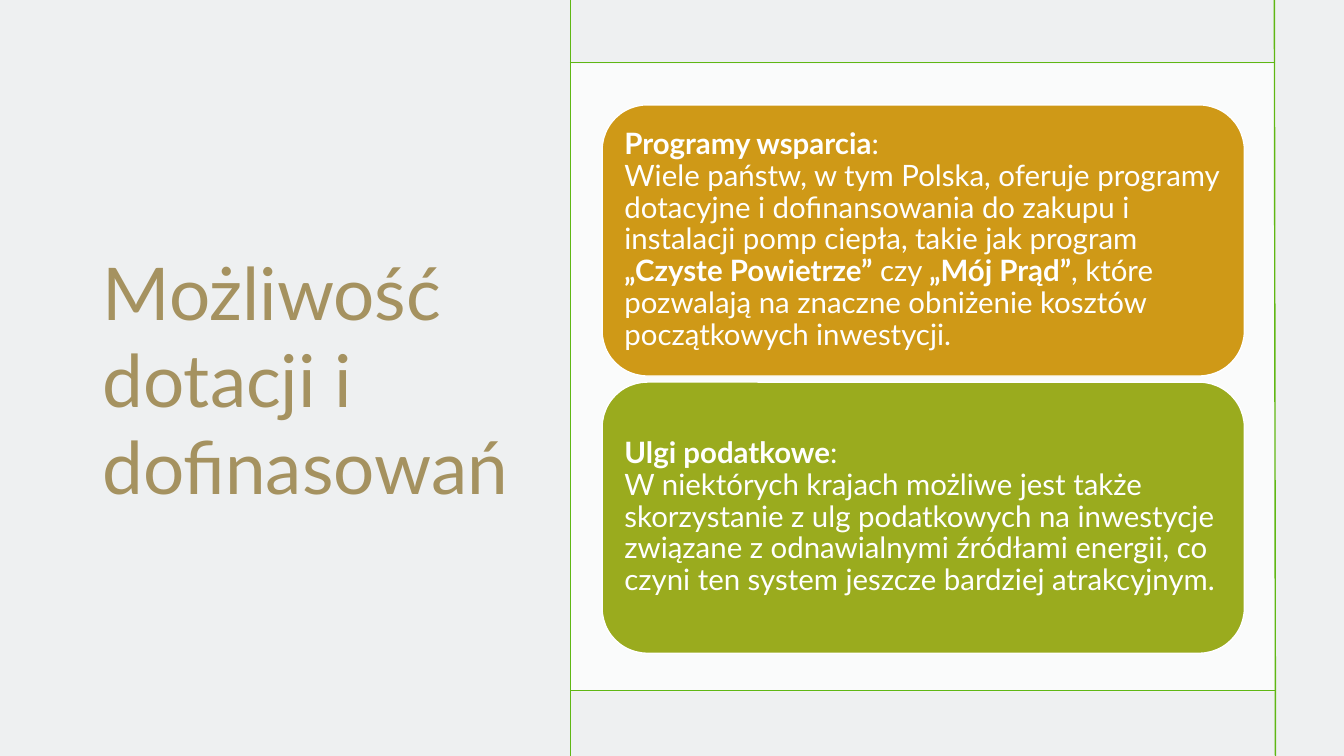
from dataclasses import dataclass

from lxml import etree
from pptx import Presentation
from pptx import util as u
from pptx.dml.color import RGBColor
from pptx.enum import shapes, text
from pptx.oxml import ns


@dataclass(frozen=True)
class Theme:
    font: str = "Lato"
    backdrop: str = "EEF0F1"
    white: str = "FFFFFF"
    rule: str = "5FB714"
    title: str = "A59260"
    amber: str = "CF9917"
    olive: str = "9AAB1E"
    title_size: int = 52
    body_size: int = 21
    line_width: int = 1
    panel_alpha: int = 75


@dataclass(frozen=True)
class Box:
    x: float
    y: float
    w: float
    h: float


@dataclass(frozen=True)
class Rule:
    x1: float
    y1: float
    x2: float
    y2: float


@dataclass(frozen=True)
class Run:
    words: str
    bold: bool = False


@dataclass(frozen=True)
class Card:
    heading: str
    body: tuple[Run, ...]
    fill: str


THEME = Theme()
WIDTH, HEIGHT = u.Inches(13.33), u.Inches(7.5)

FULL = Box(0, 0, 100, 100)
TITLE = Box(6.9, 8.53, 33.75, 83.07)
PANEL = Box(42.46, 8.4, 52.44, 83.07)
FIRST_CARD = Box(44.8, 13.87, 47.79, 35.87)
CARD_PITCH = 36.67

RULES = [
    Rule(42.4, 8.27, 94.9, 8.27),
    Rule(42.46, 91.33, 94.97, 91.33),
    Rule(42.46, 0, 42.46, 100),
    Rule(94.82, 0, 94.9, 100),
]

CARDS = [
    Card(
        "Programy wsparcia",
        (
            Run("Wiele państw, w tym Polska, oferuje programy dotacyjne i dofinansowania "
                "do zakupu i instalacji pomp ciepła, takie jak program "),
            Run("„Czyste Powietrze”", True),
            Run(" czy "),
            Run("„Mój Prąd”", True),
            Run(", które pozwalają na znaczne obniżenie kosztów początkowych inwestycji."),
        ),
        THEME.amber,
    ),
    Card(
        "Ulgi podatkowe",
        (
            Run("W niektórych krajach możliwe jest także skorzystanie z ulg podatkowych "
                "na inwestycje związane z odnawialnymi źródłami energii, co czyni ten "
                "system jeszcze bardziej atrakcyjnym."),
        ),
        THEME.olive,
    ),
]


def across(share: float) -> int:
    return round(WIDTH * share / 100)


def down(share: float) -> int:
    return round(HEIGHT * share / 100)


def place(box: Box) -> tuple[int, int, int, int]:
    return across(box.x), down(box.y), across(box.w), down(box.h)


def apply(target, formats: dict) -> None:
    for name, value in formats.items():
        setattr(target, name, value)


def add_run(p, run: Run, size: int, color: str) -> None:
    r = p.add_run()
    r.text = run.words
    apply(r.font, {"name": THEME.font, "size": u.Pt(size), "bold": run.bold})
    r.font.color.rgb = RGBColor.from_string(color)


def add_block(s, kind, box: Box, fill: str, line: str | None = None, alpha: int = 100):
    sp = s.shapes.add_shape(kind, *place(box))
    sp.shadow.inherit = False
    sp.fill.solid()
    sp.fill.fore_color.rgb = RGBColor.from_string(fill)
    if alpha < 100:
        color = sp.fill._xPr.find(".//" + ns.qn("a:srgbClr"))
        etree.SubElement(color, ns.qn("a:alpha"), val=str(alpha * 1000))
    if line:
        sp.line.color.rgb = RGBColor.from_string(line)
        sp.line.width = u.Pt(THEME.line_width)
    else:
        sp.line.fill.background()
    return sp


def add_title(s, words: str) -> None:
    tf = s.shapes.add_textbox(*place(TITLE)).text_frame
    apply(tf, {"word_wrap": True, "vertical_anchor": text.MSO_ANCHOR.MIDDLE})
    add_run(tf.paragraphs[0], Run(words), THEME.title_size, THEME.title)


def add_rule(s, rule: Rule) -> None:
    line = s.shapes.add_connector(
        shapes.MSO_CONNECTOR.STRAIGHT,
        across(rule.x1), down(rule.y1), across(rule.x2), down(rule.y2),
    )
    line.line.color.rgb = RGBColor.from_string(THEME.rule)
    line.line.width = u.Pt(THEME.line_width)
    etree.SubElement(line._element.spPr, ns.qn("a:effectLst"))


def add_card(s, card: Card, box: Box) -> None:
    sp = add_block(s, shapes.MSO_SHAPE.ROUNDED_RECTANGLE, box, card.fill, THEME.white)
    tf = sp.text_frame
    inset = u.Inches(0.09)
    apply(tf, {
        "word_wrap": True,
        "vertical_anchor": text.MSO_ANCHOR.MIDDLE,
        "margin_left": inset,
        "margin_top": inset,
        "margin_right": inset,
        "margin_bottom": inset,
    })
    p = tf.paragraphs[0]
    apply(p, {"alignment": text.PP_ALIGN.LEFT, "line_spacing": 0.9})
    for run in (Run(card.heading, True), Run(":")):
        add_run(p, run, THEME.body_size, THEME.white)
    p.add_line_break()
    for run in card.body:
        add_run(p, run, THEME.body_size, THEME.white)


def main() -> None:
    prs = Presentation()
    apply(prs, {"slide_width": WIDTH, "slide_height": HEIGHT})
    s = prs.slides.add_slide(prs.slide_layouts[6])
    add_block(s, shapes.MSO_SHAPE.RECTANGLE, FULL, THEME.backdrop)
    add_title(s, "Możliwość dotacji i dofinasowań")
    add_block(s, shapes.MSO_SHAPE.RECTANGLE, PANEL, THEME.white, alpha=THEME.panel_alpha)
    for rule in RULES:
        add_rule(s, rule)
    for i, card in enumerate(CARDS):
        top = FIRST_CARD.y + i * CARD_PITCH
        add_card(s, card, Box(FIRST_CARD.x, top, FIRST_CARD.w, FIRST_CARD.h))
    prs.save("out.pptx")


if __name__ == "__main__":
    main()
